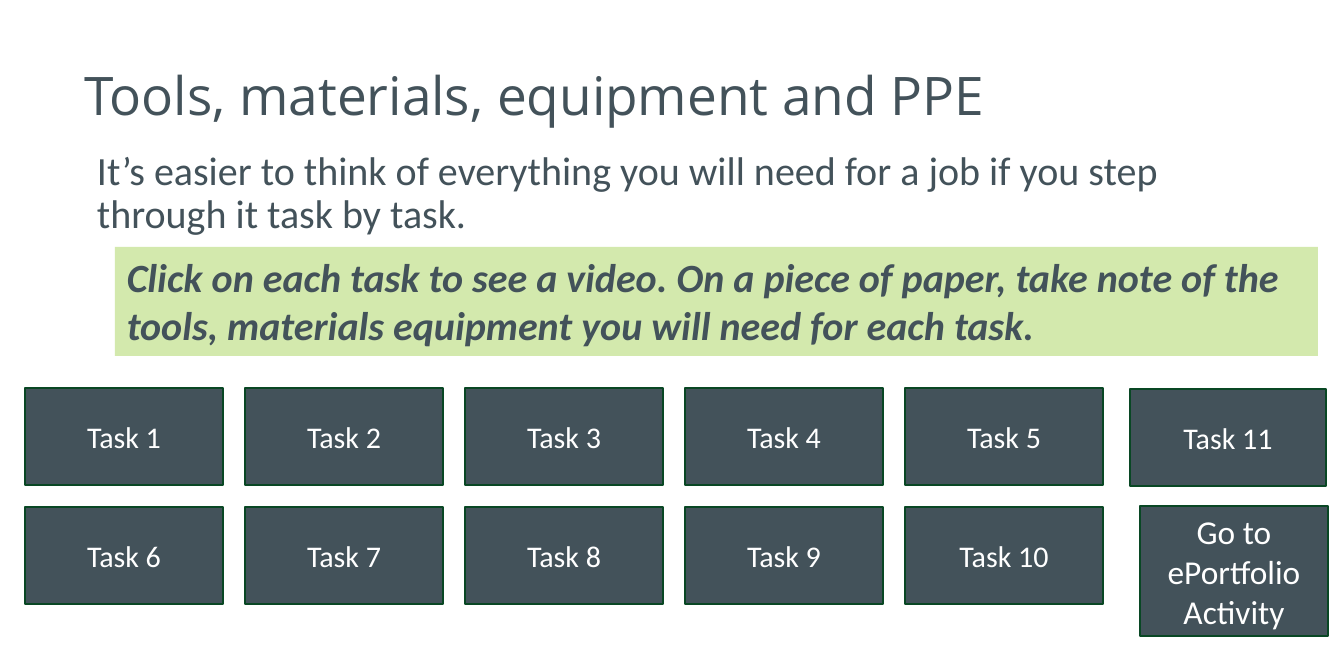
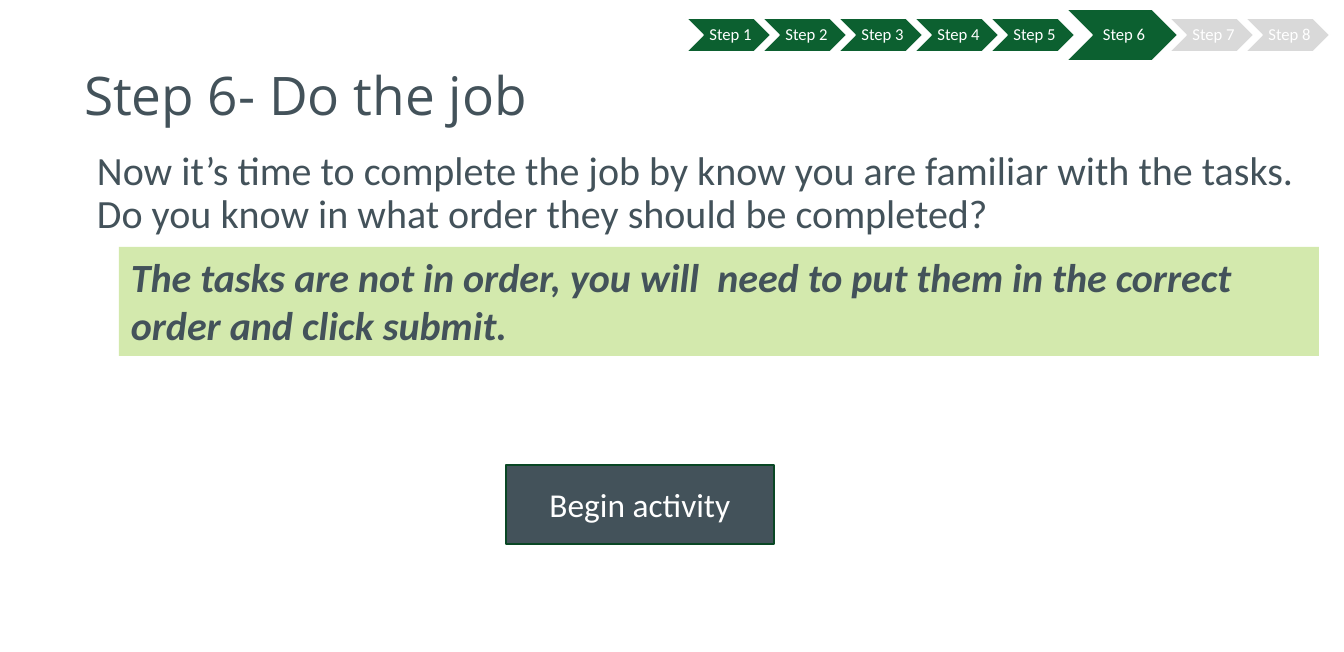
from collections import namedtuple

from lxml.etree import SubElement
from pptx import Presentation
from pptx.dml.color import RGBColor
from pptx.enum.shapes import MSO_SHAPE
from pptx.enum.text import MSO_ANCHOR, MSO_AUTO_SIZE, PP_ALIGN
from pptx.oxml.ns import qn
from pptx.util import Emu, Pt

SLATE = RGBColor(0x43, 0x52, 0x5A)
DARK_GREEN = RGBColor(0x09, 0x47, 0x24)
STEP_GREEN = RGBColor(0x0C, 0x60, 0x30)
LIME = RGBColor(0xD3, 0xE9, 0xAD)
GREY = RGBColor(0xD9, 0xD9, 0xD9)
WHITE = RGBColor(0xFF, 0xFF, 0xFF)

TITLE_FONT = "Open Sans"
TEXT_FONT = "Calibri"

Box = namedtuple("Box", "left top width height")

SLIDE_WIDTH = 1344
SLIDE_HEIGHT = 652
TITLE_BOX = Box(72, 35, 1000, 126)


def px(count):
    return Emu(count * 7620)


def place(shape, box):
    shape.left, shape.top, shape.width, shape.height = map(px, box)


def add_text(para, text, size, color, font=TEXT_FONT, emphasis=False):
    span = para.add_run()
    span.text = text
    span.font.name = font
    span.font.size = Pt(size)
    span.font.color.rgb = color
    span.font.bold = emphasis
    span.font.italic = emphasis


def add_panel(shapes, kind, box, fill, line=None):
    panel = shapes.add_shape(kind, *map(px, box))
    panel.shadow.inherit = False
    panel.fill.solid()
    panel.fill.fore_color.rgb = fill
    if line is None:
        panel.line.fill.background()
    else:
        panel.line.color.rgb = line
        panel.line.width = Pt(1)
    panel.text_frame.word_wrap = True
    return panel


def fill_placeholder(holder, box, anchor):
    place(holder, box)
    frame = holder.text_frame
    frame.word_wrap = True
    frame.auto_size = MSO_AUTO_SIZE.NONE
    frame.vertical_anchor = anchor
    para = frame.paragraphs[0]
    para.alignment = PP_ALIGN.LEFT
    para.line_spacing = 0.9
    return para


def add_titled_slide(deck, title, intro, intro_box):
    page = deck.slides.add_slide(deck.slide_layouts[1])
    para = fill_placeholder(page.shapes.title, TITLE_BOX, MSO_ANCHOR.MIDDLE)
    add_text(para, title, 31.9, SLATE, TITLE_FONT)

    para = fill_placeholder(page.placeholders[1], intro_box, MSO_ANCHOR.TOP)
    para.space_before = Pt(7.2)
    properties = para._p.get_or_add_pPr()
    properties.set("marL", "0")
    properties.set("indent", "0")
    SubElement(properties, qn("a:buNone"))
    add_text(para, intro, 24, SLATE)
    return page


def add_callout(page, box, text):
    callout = add_panel(page.shapes, MSO_SHAPE.RECTANGLE, box, LIME)
    frame = callout.text_frame
    frame.auto_size = MSO_AUTO_SIZE.SHAPE_TO_FIT_TEXT
    frame.vertical_anchor = MSO_ANCHOR.TOP
    para = frame.paragraphs[0]
    para.alignment = PP_ALIGN.LEFT
    add_text(para, text, 24, SLATE, emphasis=True)


def add_button(page, box, text, size):
    button = add_panel(page.shapes, MSO_SHAPE.RECTANGLE, box, SLATE, DARK_GREEN)
    button.text_frame.vertical_anchor = MSO_ANCHOR.MIDDLE
    para = button.text_frame.paragraphs[0]
    para.alignment = PP_ALIGN.CENTER
    add_text(para, text, size, WHITE)


def add_task_grid(page, box, columns, rows, gap):
    width = (box.width - gap * (columns - 1)) // columns
    height = (box.height - gap * (rows - 1)) // rows
    for index in range(columns * rows):
        row, column = divmod(index, columns)
        left = box.left + column * (width + gap)
        top = box.top + row * (height + gap)
        add_button(page, Box(left, top, width, height), f"Task {index + 1}", 18)


def add_step_tracker(page, box, steps, current):
    tracker = page.shapes.add_group_shape()
    left = box.left
    overlap = 9
    for step in range(1, steps + 1):
        width, height = (112, box.height) if step == current else (85, 34)
        top = box.top + (box.height - height) // 2
        fill = STEP_GREEN if step <= current else GREY
        chevron = add_panel(tracker.shapes, MSO_SHAPE.CHEVRON,
                            Box(left, top, width, height), fill, WHITE)
        frame = chevron.text_frame
        frame.word_wrap = False
        frame.vertical_anchor = MSO_ANCHOR.MIDDLE
        frame.margin_left = px(5)
        frame.margin_right = frame.margin_top = frame.margin_bottom = px(1)
        para = frame.paragraphs[0]
        para.alignment = PP_ALIGN.CENTER
        para.line_spacing = 0.9
        add_text(para, f"Step {step}", 10, WHITE)
        left += width - overlap


def build_tools_slide(deck):
    page = add_titled_slide(
        deck,
        "Tools, materials, equipment and PPE",
        "It’s easier to think of everything you will need for a job "
        "if you step through it task by task.",
        Box(85, 145, 1102, 97),
    )
    add_task_grid(page, Box(25, 388, 1080, 216), columns=5, rows=2, gap=22)
    add_button(page, Box(1140, 506, 188, 130), "Go to ePortfolio Activity", 20)
    add_callout(
        page,
        Box(115, 247, 1203, 109),
        "Click on each task to see a video. On a piece of paper, take note "
        "of the tools, materials equipment you will need for each task.",
    )
    add_button(page, Box(1130, 389, 196, 97), "Task 11", 18)


def build_job_slide(deck):
    page = add_titled_slide(
        deck,
        "Step 6- Do the job",
        "Now it’s time to complete the job by know you are familiar with "
        "the tasks. Do you know in what order they should be completed?",
        Box(85, 145, 1222, 239),
    )
    add_callout(
        page,
        Box(119, 247, 1200, 109),
        "The tasks are not in order, you will  need to put them in the "
        "correct order and click submit.",
    )
    add_button(page, Box(506, 465, 268, 79), "Begin activity", 20)
    add_step_tracker(page, Box(686, 9, 644, 52), steps=8, current=6)


def main():
    deck = Presentation()
    deck.slide_width = px(SLIDE_WIDTH)
    deck.slide_height = px(SLIDE_HEIGHT)
    build_tools_slide(deck)
    build_job_slide(deck)
    deck.save("out.pptx")


if __name__ == "__main__":
    main()
